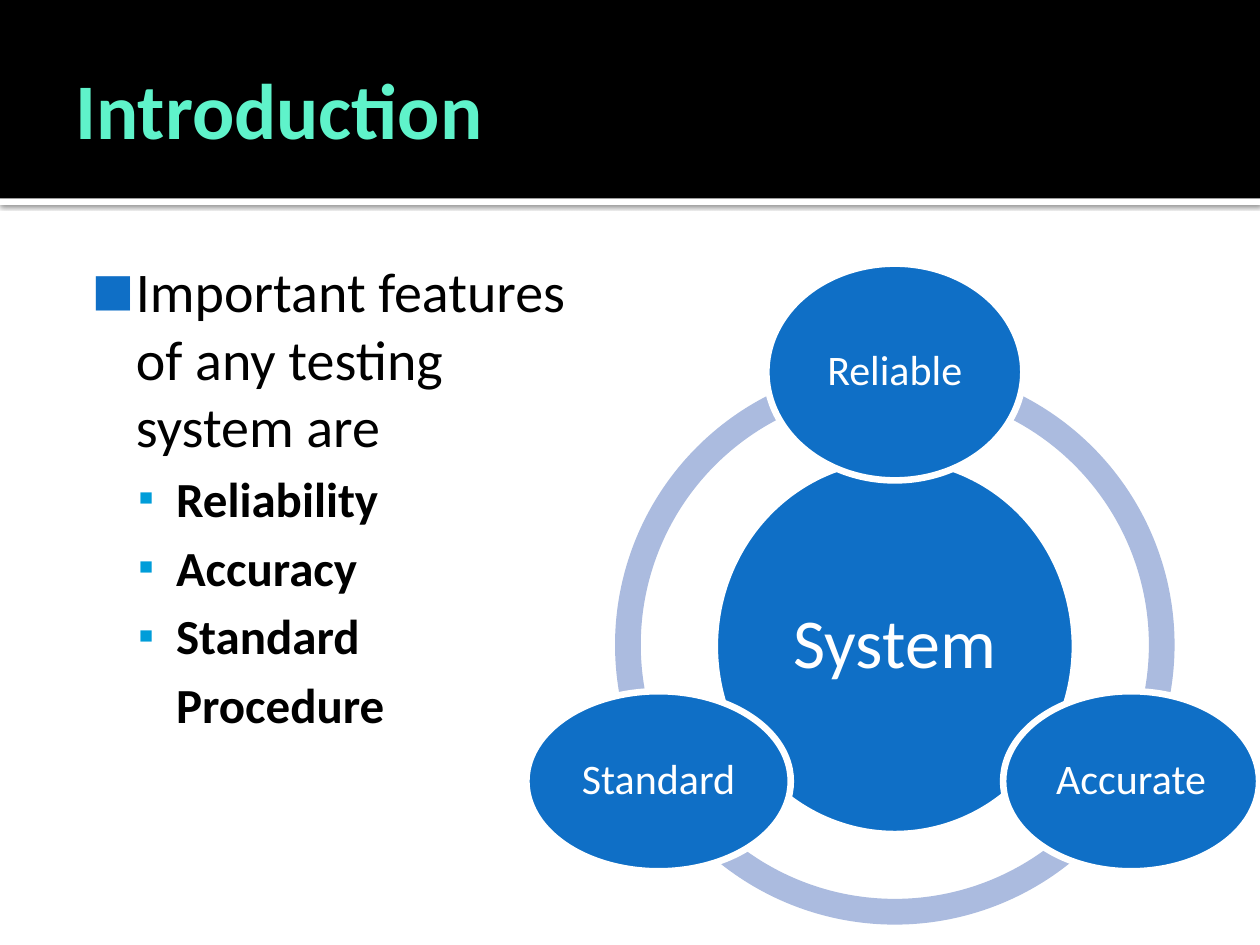
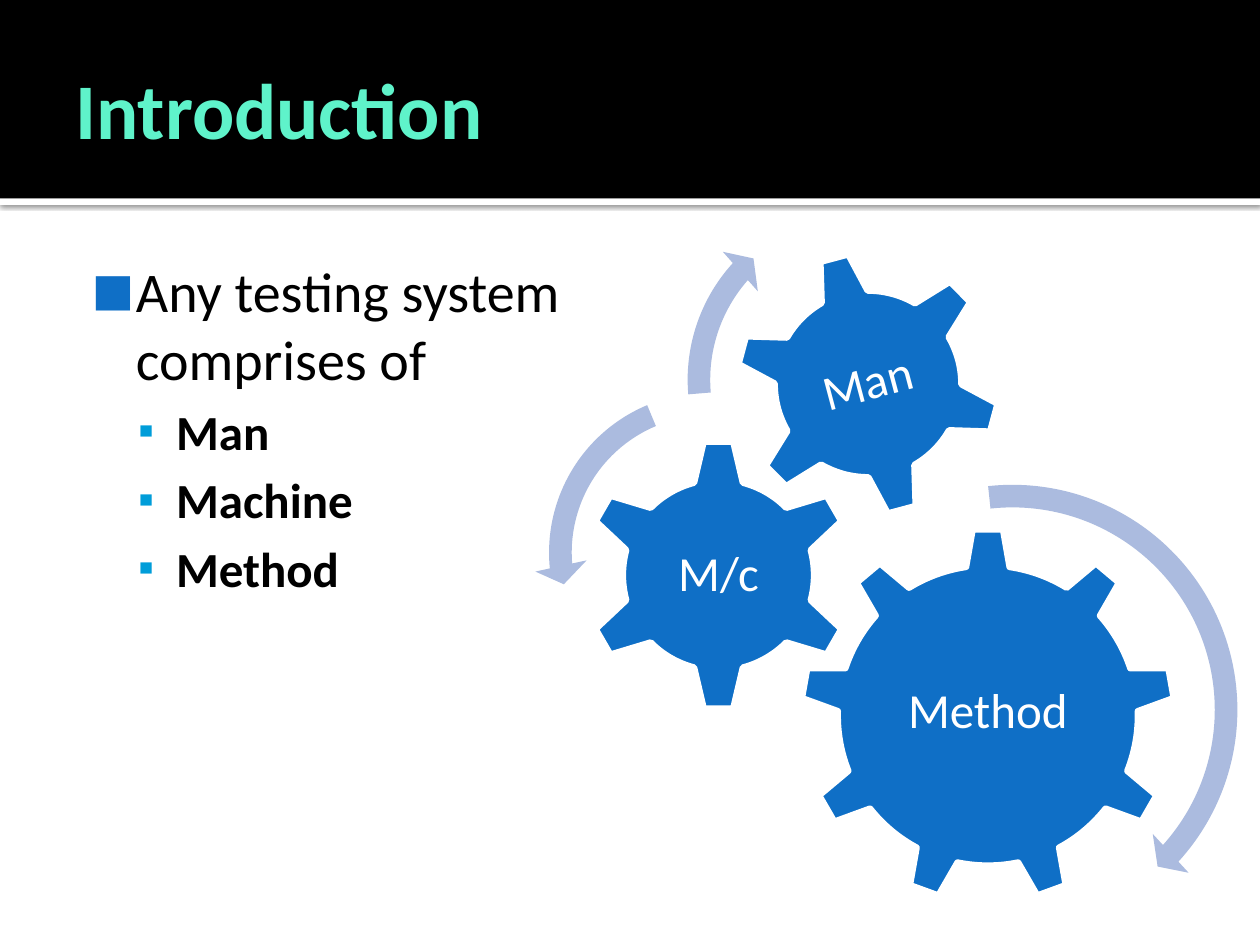
from dataclasses import dataclass
from math import cos, radians, sin

from lxml.etree import SubElement
from pptx import Presentation
from pptx.dml.color import RGBColor
from pptx.enum.shapes import MSO_SHAPE as Preset
from pptx.enum.text import MSO_ANCHOR as Anchor, MSO_AUTO_SIZE as AutoSize, PP_ALIGN as Align
from pptx.oxml.ns import qn
from pptx.util import Cm, Pt

FONT = "Calibri"
BLACK = RGBColor(0x00, 0x00, 0x00)
WHITE = RGBColor(0xFF, 0xFF, 0xFF)
MINT = RGBColor(0x5F, 0xF3, 0xCA)
BLUE = RGBColor(0x0F, 0x6F, 0xC6)
CYAN = RGBColor(0x00, 0x9D, 0xD9)
LAVENDER = RGBColor(0xAB, 0xBB, 0xDF)


@dataclass
class Box:
    left: float
    top: float
    width: float
    height: float

    def lengths(self):
        return [Cm(value) for value in (self.left, self.top, self.width, self.height)]

    def inner(self, left, top, width, height=None):
        return Box(self.left + left, self.top + top, width, height or width)

    def around_center(self, across, down, width, height):
        return self.inner(self.width / 2 + across - width / 2,
                          self.height / 2 + down - height / 2, width, height)


PAGE = Box(0, 0, 25.4, 19.05)
HEADER = Box(0, 0, 25.4, 4)
TITLE = Box(1.27, 0.43, 22.86, 3.48)
BODY = Box(1.27, 4.93, 11.23, 12.85)
RING = Box(12.4, 7.36, 11.28, 11.28)
GEARS = Box(10.77, 3.86, 14.4, 15.3)


def set_insets(frame, left, top, right, bottom):
    frame.margin_left, frame.margin_top = Cm(left), Cm(top)
    frame.margin_right, frame.margin_bottom = Cm(right), Cm(bottom)
    frame.word_wrap = True
    frame.auto_size = AutoSize.NONE


def add_span(para, text, size, color, bold=False):
    span = para.add_run()
    span.text = text
    span.font.name = FONT
    span.font.size = Pt(size)
    span.font.bold = bold
    span.font.color.rgb = color


def add_figure(page, preset, box, fill, outlined=False, adjustments=()):
    figure = page.shapes.add_shape(preset, *box.lengths())
    figure.shadow.inherit = False
    figure.fill.solid()
    figure.fill.fore_color.rgb = fill
    if outlined:
        figure.line.color.rgb = WHITE
        figure.line.width = Pt(3.78)
    else:
        figure.line.fill.background()
    for index, value in enumerate(adjustments):
        figure.adjustments[index] = value
    return figure


def add_label(figure, text, size):
    frame = figure.text_frame
    set_insets(frame, 0.1, 0.1, 0.1, 0.1)
    frame.vertical_anchor = Anchor.MIDDLE
    para = frame.paragraphs[0]
    para.alignment = Align.CENTER
    para.line_spacing = 0.9
    add_span(para, text, size, WHITE)


def add_header_to_master(deck, page, box):
    edge = add_figure(page, Preset.RECTANGLE, box.inner(0, box.height, box.width, 0.13), WHITE)
    effects = edge.element.spPr.find(qn("a:effectLst"))
    shadow = SubElement(effects, qn("a:outerShdw"), blurRad=str(Pt(2.5)),
                        dist=str(Pt(0.8)), dir="5400000", rotWithShape="0")
    color = SubElement(shadow, qn("a:srgbClr"), val=str(BLACK))
    SubElement(color, qn("a:alpha"), val="60000")
    band = add_figure(page, Preset.RECTANGLE, box, BLACK)
    tree = deck.slide_master.element.cSld.spTree
    for order, part in enumerate((edge, band)):
        part.element.nvSpPr.cNvPr.id = 20 + order
        tree.insert(2 + order, part.element)


def place(holder, box):
    holder.left, holder.top, holder.width, holder.height = box.lengths()


def fill_title(page, box, text):
    title = page.shapes.title
    place(title, box)
    frame = title.text_frame
    set_insets(frame, 0.25, 0.13, 0.13, 0.13)
    frame.vertical_anchor = Anchor.MIDDLE
    para = frame.paragraphs[0]
    para.alignment = Align.LEFT
    add_span(para, text, 45, MINT, bold=True)


def set_bullet(para, margin, hanging, symbol=None, color=None, percent=None):
    props = para._p.get_or_add_pPr()
    props.set("marL", str(Cm(margin)))
    props.set("indent", str(-Cm(hanging)))
    if symbol is None:
        SubElement(props, qn("a:buNone"))
        return
    SubElement(SubElement(props, qn("a:buClr")), qn("a:srgbClr"), val=str(color))
    SubElement(props, qn("a:buSzPct"), val=str(percent * 1000))
    SubElement(props, qn("a:buFont"), typeface=FONT)
    SubElement(props, qn("a:buChar"), char=symbol)


def fill_body(page, box, lead, items, continuation=None):
    body = page.placeholders[1]
    place(body, box)
    frame = body.text_frame
    set_insets(frame, 0.25, 0.25, 0.25, 0.13)
    para = frame.paragraphs[0]
    para.space_before = Pt(0)
    set_bullet(para, 1.22, 0.89, "■", BLUE, 80)
    add_span(para, lead, 32, BLACK)
    lines = items + ([continuation] if continuation else [])
    for index, text in enumerate(lines):
        para = frame.add_paragraph()
        para.level = 1
        para.space_before = Pt(5.6)
        if index < len(items):
            set_bullet(para, 2.03, 0.76, "▪", CYAN, 90)
        else:
            set_bullet(para, 2.03, 0)
        add_span(para, text, 28, BLACK, bold=True)


def draw_ring(page, box):
    orbit = 5.5
    satellites = [("Reliable", 270, 5.18, 4.37),
                  ("Accurate", 30, 5.16, 3.63),
                  ("Standard", 150, 5.33, 3.63)]
    for _, start, _, _ in satellites:
        end = (start + 120) % 360
        add_figure(page, Preset.BLOCK_ARC, box, LAVENDER,
                   adjustments=(start * 0.6, end * 0.6, 0.046))
    core = add_figure(page, Preset.OVAL, box.around_center(0, 0.03, 7.26, 7.57), BLUE, True)
    add_label(core, "System", 40)
    for text, angle, width, height in satellites:
        across, down = orbit * cos(radians(angle)), orbit * sin(radians(angle))
        spot = box.around_center(across, down, width, height)
        add_label(add_figure(page, Preset.OVAL, spot, BLUE, True), text, 24)


def draw_gears(page, box):
    gears = [("Method", Preset.GEAR_9, 5.36, 6.78, 7.57, 0),
             ("M/c", Preset.GEAR_6, 0.96, 4.98, 5.51, 0),
             ("Man", Preset.GEAR_6, 4.04, 1.19, 5.38, 345)]
    for text, preset, left, top, size, turn in gears:
        gear = add_figure(page, preset, box.inner(left, top, size), BLUE, True)
        gear.rotation = turn
        add_label(gear, text, 28)
    arrows = [(Preset.CIRCULAR_ARROW, 4.8, 5.61, 9.68, (0.047, 2.99, 25.32, 158.28, 0.055)),
              (Preset.LEFT_CIRCULAR_ARROW, 0, 3.76, 7.04, (0.065, 4.3, 104.89, 148.38, 0.075)),
              (Preset.CIRCULAR_ARROW, 2.79, 0, 7.59, (0.06, 3.94, 133.14, 105.08, 0.07))]
    for preset, left, top, size, adjustments in arrows:
        add_figure(page, preset, box.inner(left, top, size), LAVENDER, adjustments=adjustments)


def add_page(deck, lead, items, draw_diagram, diagram_box, continuation=None):
    page = deck.slides.add_slide(deck.slide_layouts[1])
    fill_title(page, TITLE, "Introduction")
    fill_body(page, BODY, lead, items, continuation)
    draw_diagram(page, diagram_box)
    return page


def main():
    deck = Presentation()
    deck.slide_width, deck.slide_height = Cm(PAGE.width), Cm(PAGE.height)
    first = add_page(deck, "Important features of any testing system are",
                     ["Reliability", "Accuracy", "Standard"], draw_ring, RING, "Procedure")
    add_header_to_master(deck, first, HEADER)
    add_page(deck, "Any testing system comprises of",
             ["Man", "Machine", "Method"], draw_gears, GEARS)
    deck.save("out.pptx")


if __name__ == "__main__":
    main()
